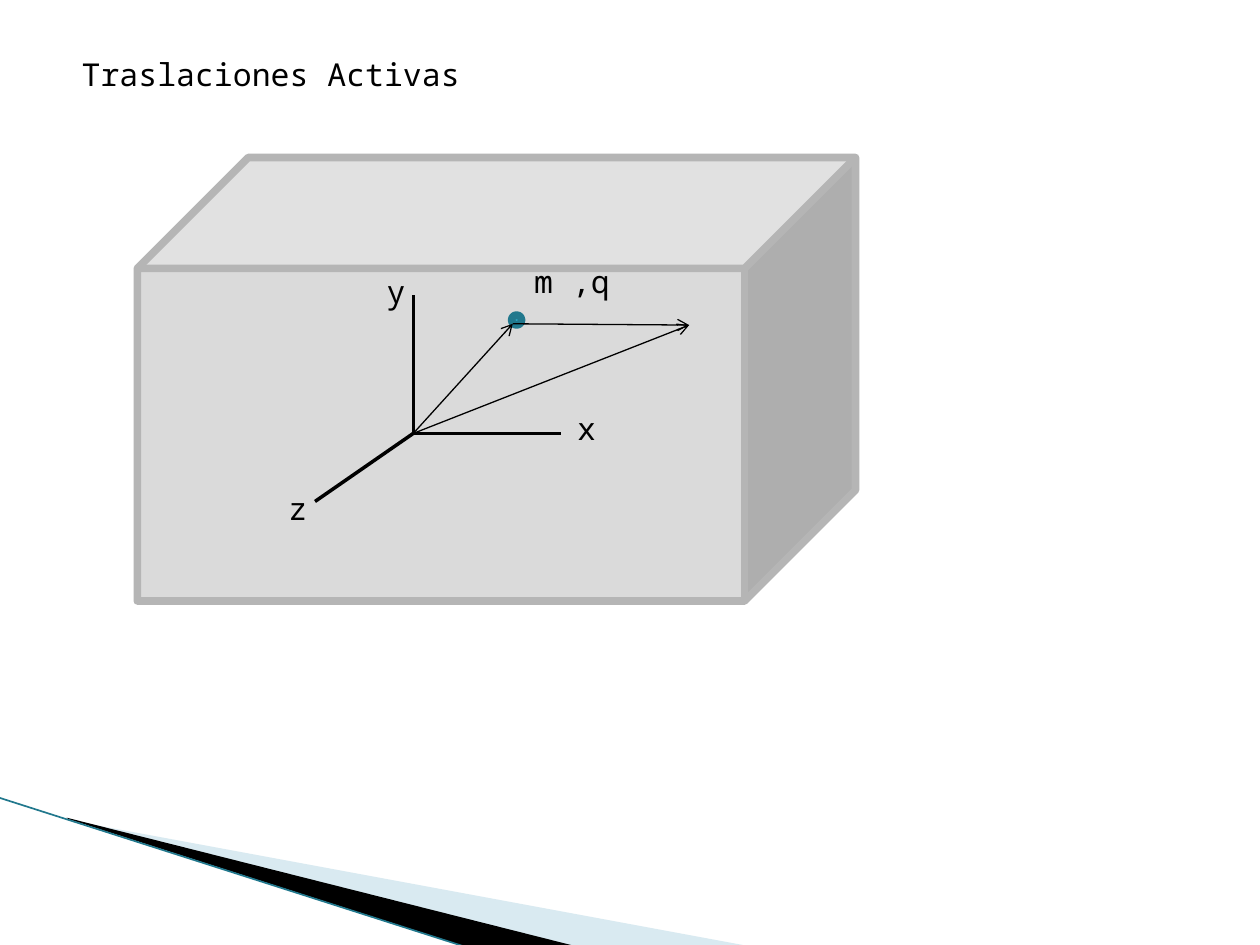
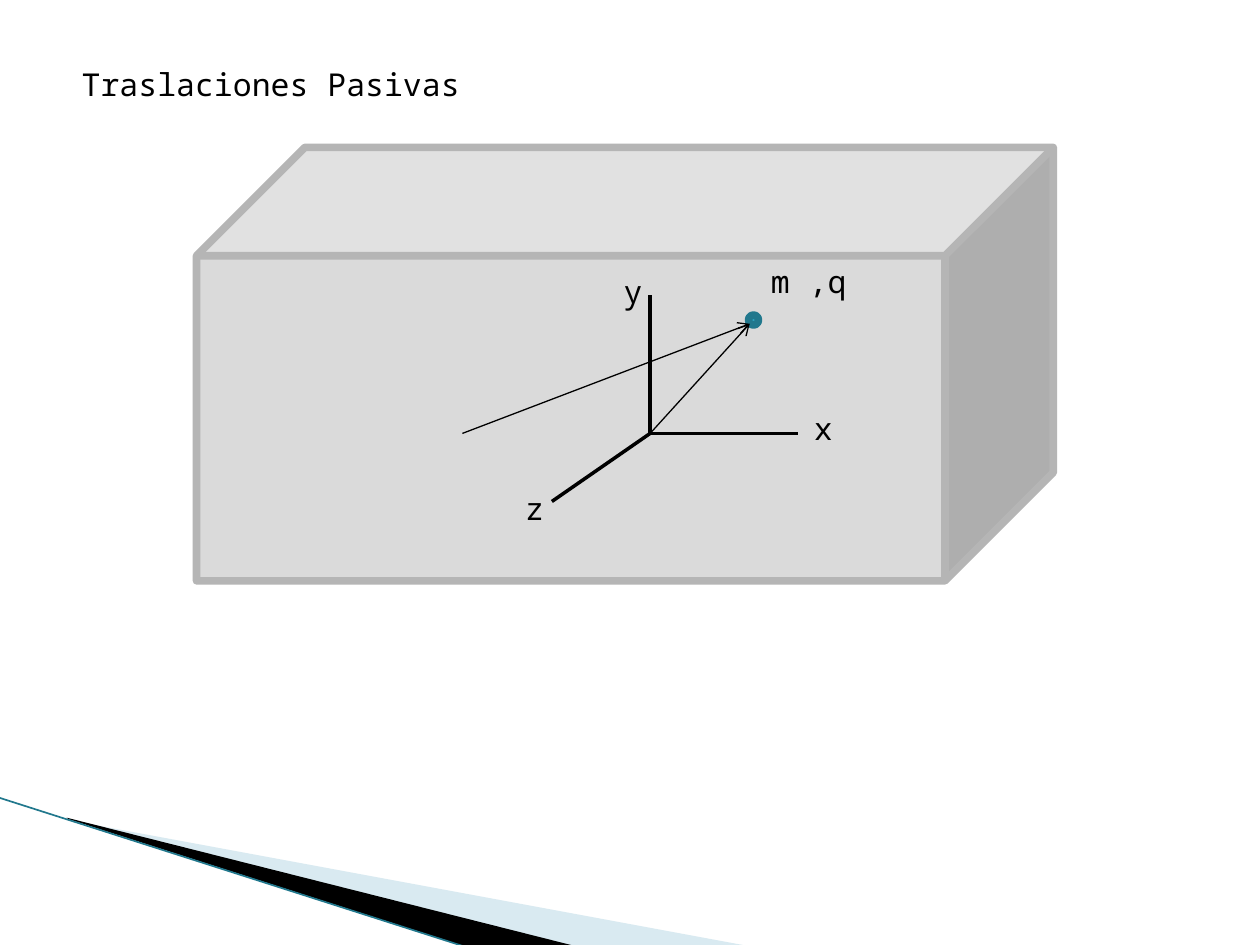
from lxml import etree
from pptx import Presentation
from pptx.dml.color import RGBColor
from pptx.enum import shapes, text
from pptx.oxml import ns
from pptx.util import Inches, Pt

BLACK = RGBColor(0x00, 0x00, 0x00)
FRONT = RGBColor(0xDA, 0xDA, 0xDA)
EDGE = RGBColor(0xB5, 0xB5, 0xB5)
DOT = RGBColor(0x2D, 0xA2, 0xBF)
TEAL = RGBColor(0x21, 0x78, 0x8D)
PALE = RGBColor(0xA0, 0xCB, 0xDC)
FONT = "Noto Sans Mono"
ORIGIN_Y = 3.44


class Deck:
    def __init__(self):
        self.prs = Presentation()
        self.prs.slide_width = Inches(10)
        self.prs.slide_height = Inches(7.5)
        self.s = None

    def slide(self):
        self.s = self.prs.slides.add_slide(self.prs.slide_layouts[6])
        self.wedge([(0.55, 6.51), (5.95, 7.51), (4.56, 7.51), (0.55, 6.5)], PALE, 40)
        self.wedge([(0.53, 6.49), (4.57, 7.51), (3.72, 7.52), (0.54, 6.5)], BLACK)
        self.line((-0.01, 6.33), (3.71, 7.52), 0.95, TEAL)

    def wedge(self, points, color, opacity=100):
        points = [(Inches(x), Inches(y)) for x, y in points]
        fb = self.s.shapes.build_freeform(*points[0])
        fb.add_line_segments(points[1:])
        sp = fb.convert_to_shape()
        sp.shadow.inherit = False
        sp.fill.solid()
        sp.fill.fore_color.rgb = color
        sp.line.fill.background()
        if opacity < 100:
            clr = sp.fill._xPr.find(".//" + ns.qn("a:srgbClr"))
            etree.SubElement(clr, ns.qn("a:alpha"), val=str(opacity * 1000))

    def line(self, start, end, width, color=BLACK, arrow=False):
        ends = [Inches(v) for v in (*start, *end)]
        cxn = self.s.shapes.add_connector(shapes.MSO_CONNECTOR.STRAIGHT, *ends)
        cxn.line.color.rgb = color
        cxn.line.width = Pt(width)
        if arrow:
            etree.SubElement(cxn.line._get_or_add_ln(), ns.qn("a:tailEnd"), type="arrow")
        etree.SubElement(cxn._element.spPr, ns.qn("a:effectLst"))

    def shape(self, kind, box, fill, edge):
        sp = self.s.shapes.add_shape(kind, *[Inches(v) for v in box])
        sp.shadow.inherit = False
        sp.fill.solid()
        sp.fill.fore_color.rgb = fill
        sp.line.color.rgb = edge
        sp.line.width = Pt(4.33)

    def label(self, words, x, y, width, inset=0.1):
        box = self.s.shapes.add_textbox(Inches(x), Inches(y), Inches(width), Inches(0.4))
        tf = box.text_frame
        tf.word_wrap = True
        tf.auto_size = text.MSO_AUTO_SIZE.SHAPE_TO_FIT_TEXT
        tf.margin_left = Inches(inset)
        tf.margin_right = 0
        p = tf.paragraphs[0]
        p.text = words
        p.font.name = FONT
        p.font.size = Pt(18)
        p.font.color.rgb = BLACK

    def axes(self, x):
        origin = (x, ORIGIN_Y)
        for dx, dy in [(0, -1.1), (1.17, 0), (-0.78, 0.54)]:
            self.line(origin, (x + dx, ORIGIN_Y + dy), 2)
        self.shape(shapes.MSO_SHAPE.FLOWCHART_CONNECTOR,
                   (x + 0.78, 2.5, 0.08, 0.08), DOT, TEAL)
        self.label("x", x + 1.25, 3.2, 0.16, inset=0.05)
        self.label("y", x - 0.31, 2.11, 0.31)
        self.label("z", x - 1.09, 3.83, 0.31)
        self.label("m ,q", x + 0.86, 2.03, 0.95)

    def translation(self, title, title_y, cube, x, arrows):
        self.slide()
        self.shape(shapes.MSO_SHAPE.CUBE, cube, FRONT, EDGE)
        self.label(title, 0.55, title_y, 4.5)
        self.axes(x)
        for start, end in arrows:
            self.line(start, end, 0.75, arrow=True)


def main():
    deck = Deck()
    origin, point, moved = (3.28, ORIGIN_Y), (4.07, 2.57), (5.47, 2.58)
    deck.translation("Traslaciones Activas", 0.39, (1.09, 1.25, 5.7, 3.52), origin[0],
                     [(origin, point), (origin, moved), (point, moved)])
    origin, point, moved = (5.16, ORIGIN_Y), (5.95, 2.57), (3.67, ORIGIN_Y)
    deck.translation("Traslaciones Pasivas", 0.47, (1.56, 1.17, 6.8, 3.44), origin[0],
                     [(origin, point), (moved, point)])
    deck.prs.save("out.pptx")


if __name__ == "__main__":
    main()
